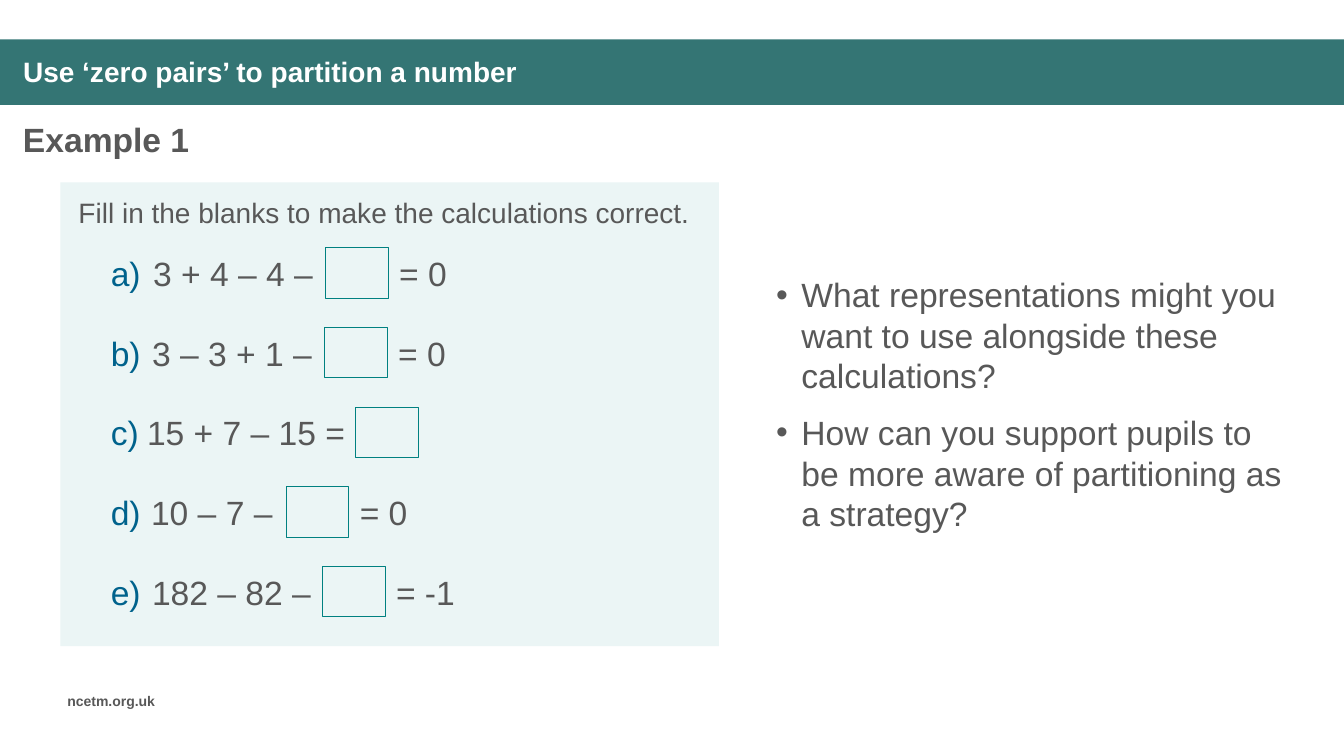
from pptx import Presentation
from pptx.dml.color import RGBColor
from pptx.enum.shapes import MSO_SHAPE
from pptx.enum.text import MSO_ANCHOR
from pptx.oxml.ns import qn
from pptx.util import Inches, Pt
from lxml.etree import SubElement

GREY, BLUE, TEAL = "585858", "00628C", "008080"

deck = Presentation()
deck.slide_width, deck.slide_height = Inches(13.33), Inches(7.5)
slide = deck.slides.add_slide(deck.slide_layouts[6])


def add_text(text, left, top, width, height, size=24, color=GREY,
             bold=False, anchor=MSO_ANCHOR.TOP):
    box = slide.shapes.add_textbox(
        Inches(left), Inches(top), Inches(width), Inches(height))
    frame = box.text_frame
    frame.word_wrap = True
    frame.vertical_anchor = anchor
    frame.text = text
    for para in frame.paragraphs:
        for run in para.runs:
            run.font.name = "Arial"
            run.font.size = Pt(size)
            run.font.bold = bold
            run.font.color.rgb = RGBColor.from_string(color)
    return frame


def add_rect(left, top, width, height, fill=None, line=None):
    rect = slide.shapes.add_shape(
        MSO_SHAPE.RECTANGLE,
        Inches(left), Inches(top), Inches(width), Inches(height))
    rect.shadow.inherit = False
    if fill:
        rect.fill.solid()
        rect.fill.fore_color.rgb = RGBColor.from_string(fill)
    else:
        rect.fill.background()
    if line:
        rect.line.color.rgb = RGBColor.from_string(line)
        rect.line.width = Pt(0.75)
    else:
        rect.line.fill.background()


# Title band, heading and footer
add_rect(0, 0.39, 13.33, 0.65, fill="347574")
title = add_text("Use ‘zero pairs’ to partition a number", 0.13, 0.49, 11.58, 0.47,
                 size=20, color="FFFFFF", bold=True, anchor=MSO_ANCHOR.MIDDLE)
title.paragraphs[0].line_spacing = 0.9
add_text("Example 1", 0.13, 1.13, 6.66, 0.5, bold=True)
add_text("ncetm.org.uk", 0.57, 6.82, 1.21, 0.27, size=10, bold=True)

# Task panel
add_rect(0.6, 1.81, 6.53, 4.6, fill="EBF5F5")
add_text("Fill in the blanks to make the calculations correct.",
         0.68, 1.89, 6.32, 0.44, size=20, anchor=MSO_ANCHOR.MIDDLE)

# Calculations: label, left side, its left edge, blank's left edge, right side
sums = [
    ("a)", "3 + 4 – 4 –", 1.42, 3.23, "= 0"),
    ("b)", "3 – 3 + 1 –", 1.41, 3.22, "= 0"),
    ("c)", "15 + 7 – 15 =", 1.36, 3.53, ""),
    ("d)", "10 – 7 –", 1.4, 2.84, "= 0"),
    ("e)", "182 – 82 –", 1.41, 3.2, "= -1"),
]
for row, (label, start, left, blank, end) in enumerate(sums):
    top = 2.46 + row * 0.79
    add_text(label, 1, top, 0.59, 0.5, color=BLUE)
    add_text(start, left, top, 2.25, 0.5)
    add_rect(blank, top, 0.62, 0.5, line=TEAL)
    if end:
        add_text(end, blank + 0.63, top, 0.85, 0.5)

# Discussion questions
asks = add_text(
    "What representations might you want to use alongside these calculations?\n"
    "How can you support pupils to be more aware of partitioning as a strategy?",
    7.46, 1.9, 5.35, 4.21, anchor=MSO_ANCHOR.MIDDLE)
for para in asks.paragraphs:
    para.space_after = Pt(12)
    props = para._p.get_or_add_pPr()
    props.set("marL", str(Inches(0.39)))
    props.set("indent", str(Inches(-0.25)))
    SubElement(props, qn("a:buFont")).set("typeface", "Arial")
    SubElement(props, qn("a:buChar")).set("char", "•")

deck.save("out.pptx")
